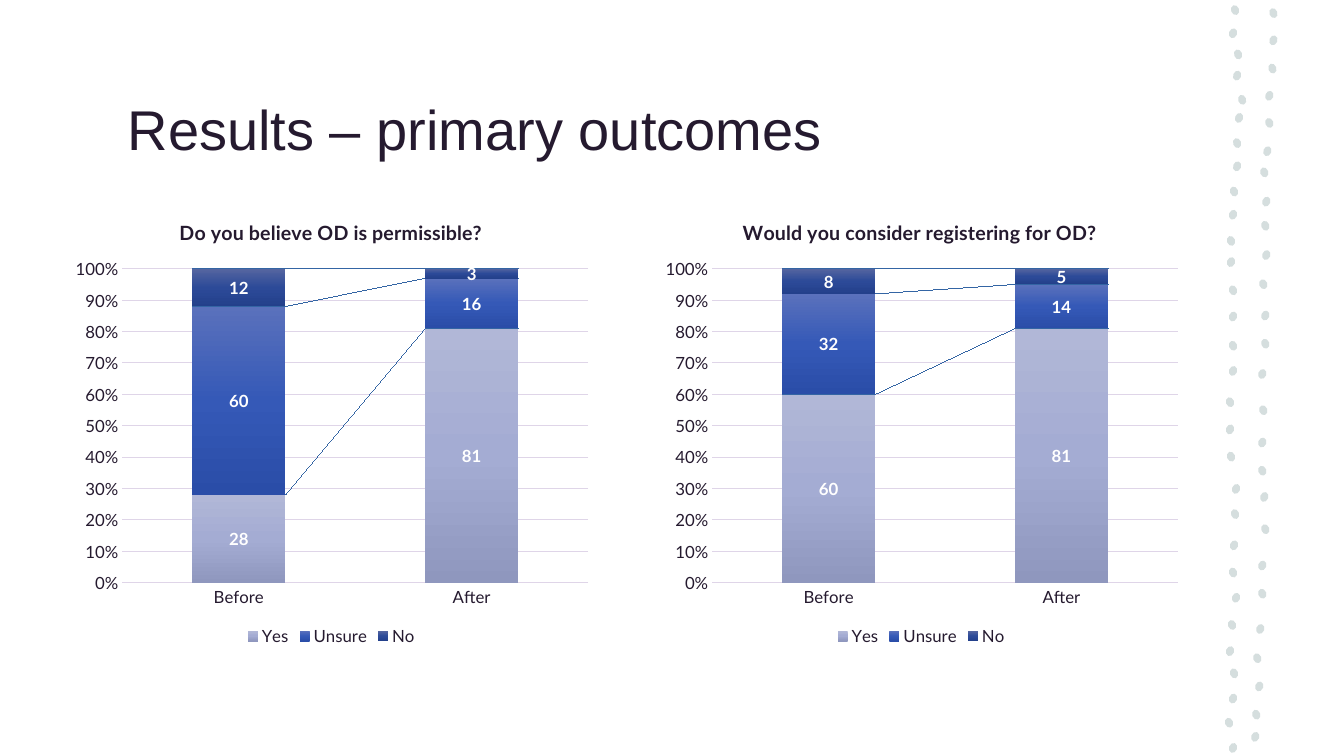
import copy
import math
import pptx
import pptx.chart.data
import pptx.dml.color
import pptx.enum.chart
import pptx.enum.text
import pptx.oxml
import pptx.oxml.ns
import pptx.util

RGB = pptx.dml.color.RGBColor
Inches, Pt, qn = pptx.util.Inches, pptx.util.Pt, pptx.oxml.ns.qn
XL = pptx.enum.chart

INK = RGB(0x25, 0x1A, 0x2F)
GRID = RGB(0xDF, 0xD5, 0xE8)
DOT = RGB(0xD5, 0xDE, 0xDE)
WHITE = RGB(0xFF, 0xFF, 0xFF)
# Top, middle and bottom of each answer's gradient
ANSWERS = {
    "Yes": (RGB(0xB1, 0xB7, 0xD7), RGB(0xA4, 0xAC, 0xD3), RGB(0x8F, 0x97, 0xBE)),
    "Unsure": (RGB(0x5A, 0x71, 0xBC), RGB(0x35, 0x59, 0xB7), RGB(0x2A, 0x4D, 0xA8)),
    "No": (RGB(0x55, 0x65, 0xA0), RGB(0x2C, 0x4A, 0x98), RGB(0x23, 0x40, 0x8B)),
}


def set_font(font, size, color=INK, bold=False, name="Lato"):
    font.size, font.bold, font.name = Pt(size), bold, name
    font.color.rgb = color


def set_layout(element, index, target="", **shares):
    """Place a chart part by shares of the chart's size."""
    for old in element.findall(qn("c:layout")):
        element.remove(old)
    modes = "".join(f'<c:{k}Mode val="edge"/>' for k in "xy")
    values = "".join(f'<c:{k} val="{v}"/>' for k, v in shares.items())
    element.insert(index, pptx.oxml.parse_xml(
        f'<c:layout {pptx.oxml.ns.nsdecls("c")}><c:manualLayout>'
        f'{target}{modes}{values}</c:manualLayout></c:layout>'))


prs = pptx.Presentation()
prs.slide_width, prs.slide_height = Inches(13.33), Inches(7.5)
s = prs.slides.add_slide(prs.slide_layouts[6])

# Two wavering columns of dots: (x, y) centres
DOTS = [
    [(12.25, .10), (12.23, .33), (12.28, .54), (12.27, .75), (12.32, .99), (12.29, 1.17),
     (12.27, 1.42), (12.27, 1.65), (12.24, 1.90), (12.23, 2.13), (12.21, 2.39), (12.21, 2.60),
     (12.23, 2.88), (12.23, 3.14), (12.23, 3.43), (12.23, 3.68), (12.20, 3.99), (12.20, 4.26),
     (12.21, 4.53), (12.26, 4.85), (12.25, 5.10), (12.24, 5.41), (12.23, 5.68), (12.26, 5.93),
     (12.22, 6.20), (12.20, 6.46), (12.24, 6.68), (12.23, 6.93), (12.19, 7.17), (12.23, 7.42)],
    [(12.63, .13), (12.63, .40), (12.62, .68), (12.59, .95), (12.59, 1.22), (12.57, 1.50),
     (12.54, 1.71), (12.56, 2.00), (12.55, 2.24), (12.56, 2.53), (12.53, 2.82), (12.55, 3.13),
     (12.55, 3.41), (12.52, 3.71), (12.53, 4.07), (12.52, 4.39), (12.52, 4.67), (12.54, 4.93),
     (12.55, 5.25), (12.52, 5.61), (12.52, 5.89), (12.50, 6.24), (12.47, 6.53), (12.49, 6.81),
     (12.46, 7.09), (12.45, 7.31)],
]
CORNERS = 8
for column in DOTS:
    for i, (x, y) in enumerate(column):
        tilt = math.radians(20 if i % 2 else -20)
        outline = []
        for corner in range(CORNERS):
            a = corner * math.tau / CORNERS
            dx, dy = .04 * math.cos(a), .05 * math.sin(a)
            outline.append((Inches(x + dx * math.cos(tilt) - dy * math.sin(tilt)),
                            Inches(y + dx * math.sin(tilt) + dy * math.cos(tilt))))
        fb = s.shapes.build_freeform(*outline[0])
        fb.add_line_segments(outline[1:])
        sp = fb.convert_to_shape()
        sp.shadow.inherit = False
        sp.fill.solid()
        sp.fill.fore_color.rgb = DOT
        sp.line.fill.background()

# Title
tb = s.shapes.add_textbox(Inches(1.17), Inches(.55), Inches(10.54), Inches(1.45))
tf = tb.text_frame
tf.word_wrap = True
tf.vertical_anchor = pptx.enum.text.MSO_ANCHOR.MIDDLE
tf.text = "Results – primary outcomes"
set_font(tf.paragraphs[0].runs[0].font, 40, name="Arial")

# Charts: left edge, question, left share of its title, values per answer
CHARTS = [
    (.63, "Do you believe OD is permissible?", .21, [(28, 81), (60, 16), (12, 3)]),
    (6.48, "Would you consider registering for OD?", .16, [(60, 81), (32, 14), (8, 5)]),
]
for left, question, title_x, values in CHARTS:
    data = pptx.chart.data.CategoryChartData()
    data.categories = ["Before", "After"]
    for answer, vals in zip(ANSWERS, values):
        data.add_series(answer, vals)
    chart = s.shapes.add_chart(XL.XL_CHART_TYPE.COLUMN_STACKED_100, Inches(left), Inches(2),
                               Inches(5.31), Inches(4.45), data).chart
    set_font(chart.font, 12)

    # Question and legend
    chart.has_title = True
    title = chart.chart_title
    title.text_frame.text = question
    set_font(title.text_frame.paragraphs[0].runs[0].font, 14, bold=True)
    set_layout(title._element, 1, x=title_x, y=.03)
    chart.has_legend = True
    chart.legend.position = XL.XL_LEGEND_POSITION.BOTTOM
    chart.legend.include_in_layout = False
    set_font(chart.legend.font, 12)

    # Axes
    for axis in (chart.category_axis, chart.value_axis):
        axis.major_tick_mark = axis.minor_tick_mark = XL.XL_TICK_MARK.NONE
        set_font(axis.tick_labels.font, 12)
    axis.maximum_scale, axis.major_unit = 1, .1
    axis.tick_labels.number_format = "0%"
    axis.tick_labels.number_format_is_linked = False
    axis.format.line.fill.background()
    for line in (chart.category_axis.format.line, axis.major_gridlines.format.line):
        line.color.rgb, line.width = GRID, Pt(.75)
    set_layout(chart._chartSpace.chart.plotArea, 0, '<c:layoutTarget val="inner"/>',
               x=.11, y=.15, w=.87, h=.7)

    # Columns joined by series lines
    plot = chart.plots[0]
    plot.vary_by_categories = False
    plot.gap_width, plot.overlap = 150, 100
    plot._element.find(qn("c:overlap")).addnext(pptx.oxml.parse_xml(
        f'<c:serLines {pptx.oxml.ns.nsdecls("c", "a")}><c:spPr><a:ln w="9525"><a:solidFill>'
        '<a:srgbClr val="2F6098"/></a:solidFill></a:ln></c:spPr></c:serLines>'))
    for series, colors in zip(plot.series, ANSWERS.values()):
        fill = series.format.fill
        fill.gradient()
        fill.gradient_angle = 270
        stops = series._element.find(".//" + qn("a:gsLst"))
        stops.append(copy.deepcopy(stops[0]))
        for stop, position, color in zip(fill.gradient_stops, (0, .5, 1), colors):
            stop.position, stop.color.rgb = position, color
        labels = series.data_labels
        labels.show_value = True
        labels.position = XL.XL_LABEL_POSITION.CENTER
        set_font(labels.font, 12, WHITE, bold=True)

prs.save("out.pptx")
